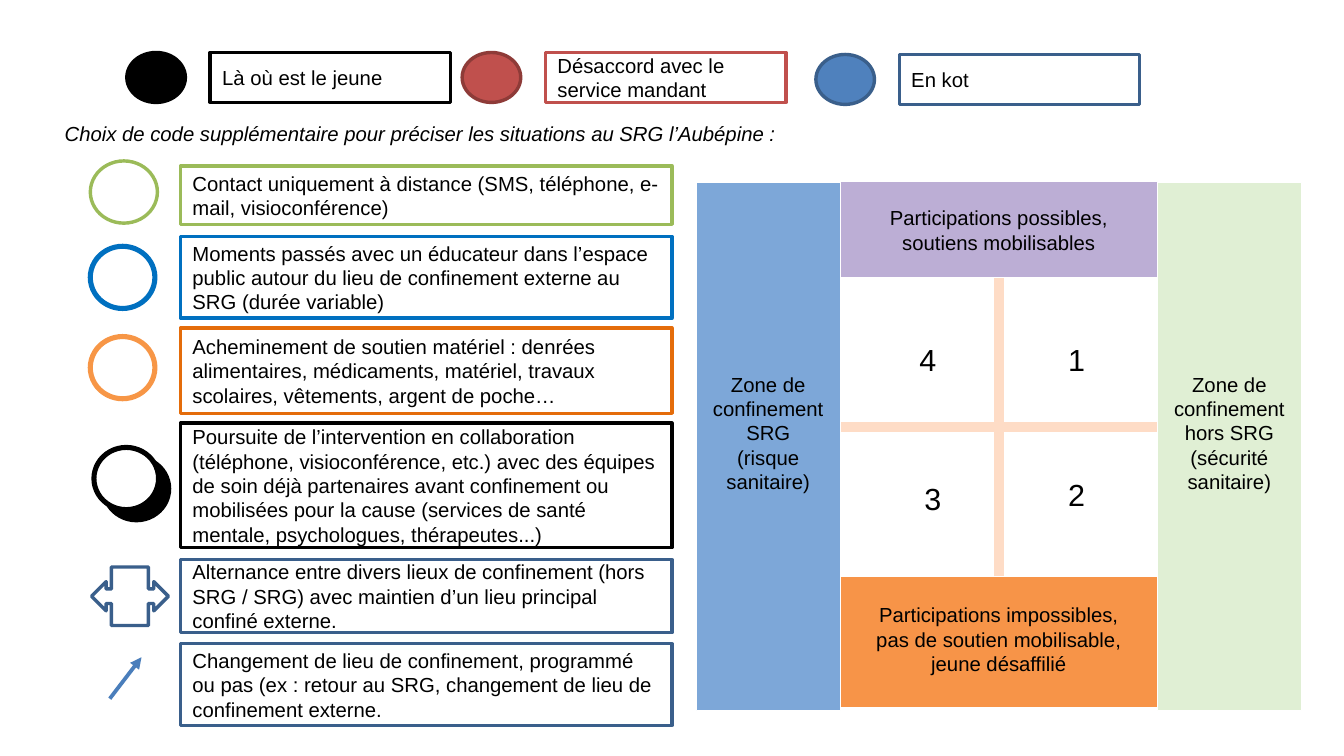
from dataclasses import dataclass
from typing import Optional

from lxml import etree
from pptx import Presentation
from pptx import util as u
from pptx.dml.color import RGBColor
from pptx.enum import shapes, text
from pptx.oxml import ns

WIDE, HIGH = u.Inches(11.02), u.Inches(6.2)
FONT = "Arial"
BLACK = RGBColor(0, 0, 0)
WHITE = RGBColor(0xFF, 0xFF, 0xFF)
NAVY = RGBColor(0x3A, 0x5F, 0x8B)
STEEL = RGBColor(0x4F, 0x81, 0xBD)
ARROW = RGBColor(0x4A, 0x7E, 0xBB)
BLUE = RGBColor(0x00, 0x70, 0xC0)
GREEN = RGBColor(0x9B, 0xBB, 0x59)
ORANGE = RGBColor(0xF7, 0x96, 0x46)
RUST = RGBColor(0xE4, 0x6C, 0x0A)
RED = RGBColor(0xC0, 0x50, 0x4D)
WINE = RGBColor(0x8E, 0x3B, 0x38)
PEACH = RGBColor(0xFE, 0xDC, 0xC6)
AMBER = RGBColor(0xF7, 0x94, 0x48)
LILAC = RGBColor(0xBC, 0xAE, 0xD5)
SKY = RGBColor(0x7D, 0xA7, 0xD8)
MINT = RGBColor(0xE0, 0xEF, 0xD4)

KIND = shapes.MSO_SHAPE
LEFT, MID = text.PP_ALIGN.LEFT, text.PP_ALIGN.CENTER


@dataclass(frozen=True)
class Area:
    """Left, top, width and height in percent of the slide."""
    x: float
    y: float
    w: float
    h: float

    def emu(self) -> tuple[int, int, int, int]:
        return across(self.x), down(self.y), across(self.w), down(self.h)


@dataclass(frozen=True)
class Key:
    x: float
    y: float
    fill: RGBColor
    edge: RGBColor
    frame: RGBColor
    label: str


@dataclass(frozen=True)
class Code:
    y: float
    h: float
    frame: RGBColor
    label: str
    sign: Optional[Area] = None
    edge: RGBColor = NAVY
    pen: float = 3
    kind: int = KIND.OVAL


@dataclass(frozen=True)
class Zone:
    area: Area
    fill: RGBColor
    label: str
    lift: float = 0.05


KEYS = [
    Key(9.44, 6.94, BLACK, BLACK, BLACK, "Là où est le jeune"),
    Key(34.39, 6.94, RED, WINE, RED, "Désaccord avec le service mandant"),
    Key(60.71, 7.2, STEEL, NAVY, NAVY, "En kot"),
]
CODES = [
    Code(21.94, 7.74, GREEN, "Contact uniquement à distance (SMS, téléphone, e-mail, "
         "visioconférence)", Area(6.72, 21.29, 4.99, 8.23), GREEN, 2),
    Code(31.29, 10.81, BLUE, "Moments passés avec un éducateur dans l’espace public "
         "autour du lieu de confinement externe au SRG (durée variable)",
         Area(6.72, 32.58, 4.81, 8.23), BLUE),
    Code(43.39, 11.29, RUST, "Acheminement de soutien matériel : denrées alimentaires, "
         "médicaments, matériel, travaux scolaires, vêtements, argent de poche…",
         Area(6.72, 44.52, 4.81, 8.23), ORANGE),
    Code(55.97, 16.45, BLACK, "Poursuite de l’intervention en collaboration (téléphone, "
         "visioconférence, etc.) avec des équipes de soin déjà partenaires avant "
         "confinement ou mobilisées pour la cause (services de santé mentale, "
         "psychologues, thérapeutes...)", Area(6.99, 59.19, 4.81, 8.23), BLACK),
    Code(74.03, 9.68, NAVY, "Alternance entre divers lieux de confinement (hors SRG / SRG) "
         "avec maintien d’un lieu principal confiné externe.",
         Area(6.81, 75, 5.72, 7.74), NAVY, 2, KIND.LEFT_RIGHT_ARROW_CALLOUT),
    Code(85.16, 10.81, NAVY, "Changement de lieu de confinement, programmé ou pas "
         "(ex : retour au SRG, changement de lieu de confinement externe."),
]
ZONES = [
    Zone(Area(62.52, 24.03, 23.6, 12.74), LILAC,
         "Participations possibles,\nsoutiens mobilisables"),
    Zone(Area(62.52, 76.21, 23.6, 17.42), AMBER, "Participations impossibles,\n"
         "pas de soutien mobilisable,\njeune désaffilié", 0.1),
    Zone(Area(51.81, 24.19, 10.71, 69.84), SKY,
         "Zone de confinement SRG\n(risque sanitaire)", 0.28),
    Zone(Area(86.12, 24.19, 10.71, 69.84), MINT,
         "Zone de confinement hors SRG (sécurité sanitaire)", 0.28),
]
DIGITS = {"4": (67.51, 44.52), "1": (78.58, 44.52),
          "2": (78.58, 62.26), "3": (67.88, 62.9)}


def across(share: float) -> int:
    return round(WIDE * share / 100)


def down(share: float) -> int:
    return round(HIGH * share / 100)


def write(shape, words: str, align=LEFT, size: float = 12, slant: bool = False) -> None:
    frame = shape.text_frame
    frame.text = words
    frame.word_wrap = True
    frame.auto_size = text.MSO_AUTO_SIZE.NONE
    frame.vertical_anchor = text.MSO_ANCHOR.MIDDLE
    for para in frame.paragraphs:
        para.alignment = align
        for run in para.runs:
            font = run.font
            font.name, font.size, font.italic = FONT, u.Pt(size), slant
            font.color.rgb = BLACK


def draw(slide, kind: int, area: Area, edge: RGBColor, pen: float = 2,
         fill: Optional[RGBColor] = None):
    shape = slide.shapes.add_shape(kind, *area.emu())
    shape.shadow.inherit = False
    if fill is None:
        shape.fill.background()
    else:
        shape.fill.solid()
        shape.fill.fore_color.rgb = fill
    shape.line.color.rgb = edge
    shape.line.width = u.Pt(pen)
    return shape


def link(slide, x1: float, y1: float, x2: float, y2: float, color: RGBColor, pen: float):
    line = slide.shapes.add_connector(shapes.MSO_CONNECTOR.STRAIGHT, across(x1),
                                      down(y1), across(x2), down(y2))
    line.line.color.rgb = color
    line.line.width = u.Pt(pen)
    etree.SubElement(line._element.spPr, ns.qn("a:effectLst"))
    return line


def shade(shape) -> None:
    """Hard black shadow towards the lower right."""
    group = shape._element.spPr.find(ns.qn("a:effectLst"))
    outer = etree.SubElement(group, ns.qn("a:outerShdw"), blurRad="0",
                             dist=str(u.Pt(8.5)), dir="2700000", algn="tl",
                             rotWithShape="0")
    etree.SubElement(outer, ns.qn("a:srgbClr"), val=str(BLACK))


def main() -> None:
    deck = Presentation()
    deck.slide_width, deck.slide_height = WIDE, HIGH
    slide = deck.slides.add_slide(deck.slide_layouts.get_by_name("Title Only"))

    # Heading
    title = slide.shapes.title
    title.left, title.top, title.width, title.height = Area(3.9, 14.35, 73.68, 6.61).emu()
    write(title, "Choix de code supplémentaire pour préciser les situations "
          "au SRG l’Aubépine :", slant=True)

    # Colour key
    for key in KEYS:
        draw(slide, KIND.OVAL, Area(key.x, key.y, 4.36, 6.61), key.edge, fill=key.fill)
        write(draw(slide, KIND.RECTANGLE, Area(key.x + 6.2, key.y, 17.9, 6.61),
                   key.frame), key.label)

    # Extra codes
    for code in CODES:
        if code.sign:
            dark = code.edge == BLACK
            sign = draw(slide, code.kind, code.sign, code.edge, code.pen,
                        WHITE if dark else None)
            if dark:
                shade(sign)
        write(draw(slide, KIND.RECTANGLE, Area(13.43, code.y, 36.57, code.h),
                   code.frame), code.label)
    move = link(slide, 8.17, 92.42, 10.53, 86.94, ARROW, 2.25)
    etree.SubElement(move.line._get_or_add_ln(), ns.qn("a:tailEnd"), type="triangle")

    # Zones around the cross
    link(slide, 62.52, 56.45, 86.12, 56.45, PEACH, 6)
    made = []
    for zone in ZONES:
        box = draw(slide, KIND.RECTANGLE, zone.area, WHITE, 0.75, zone.fill)
        write(box, zone.label, MID)
        box.text_frame.margin_bottom = u.Inches(zone.lift)
        made.append(box)
    upper, lower = made[:2]
    stem = link(slide, 74.32, 76.21, 74.32, 36.77, PEACH, 6)
    stem.begin_connect(lower, 0)
    stem.end_connect(upper, 2)

    # Quadrant numbers
    for digit, (x, y) in DIGITS.items():
        label = slide.shapes.add_textbox(*Area(x, y, 2.99, 6.13).emu())
        write(label, digit, size=18)
        label.text_frame.word_wrap = False

    deck.save("out.pptx")


if __name__ == "__main__":
    main()
